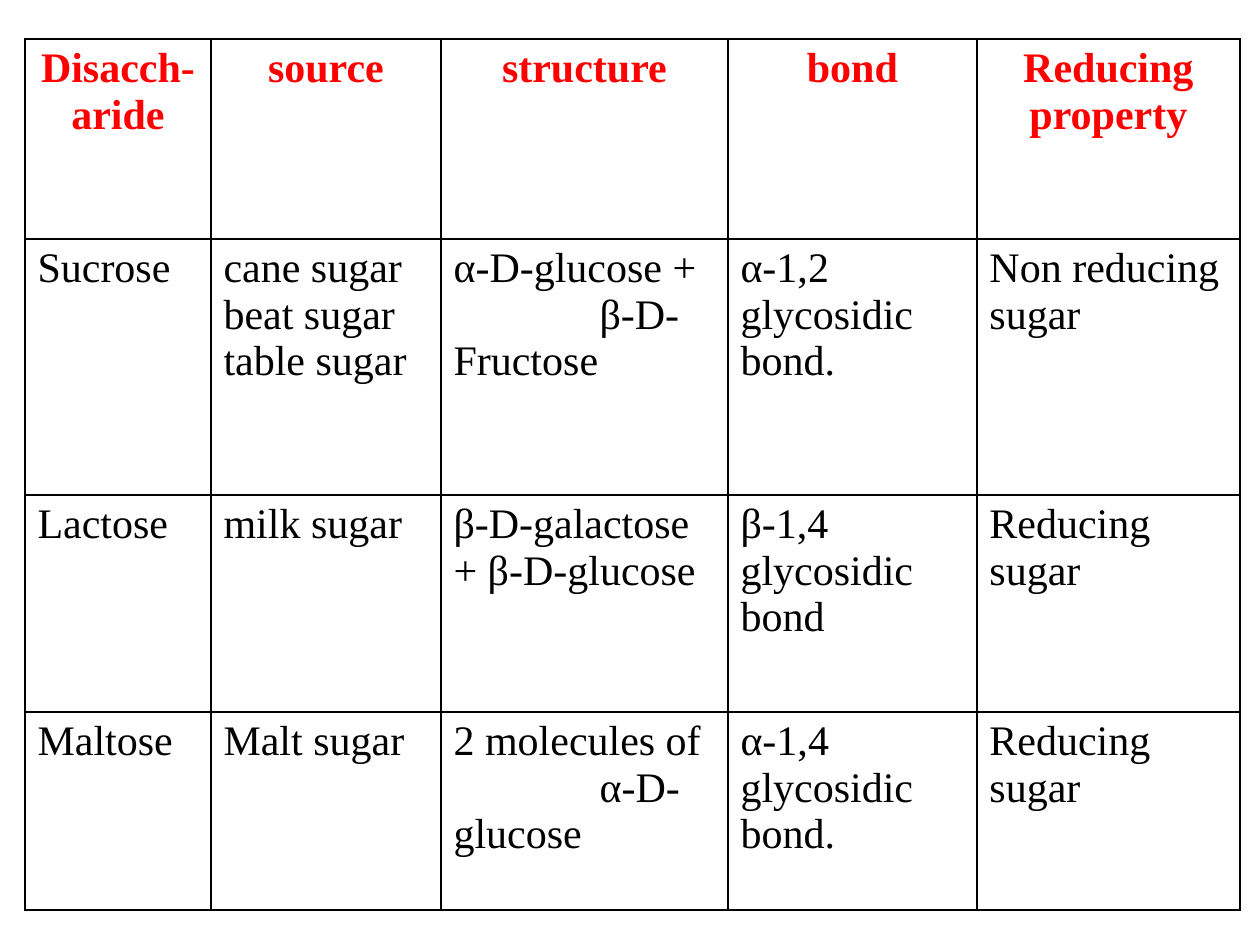
from dataclasses import dataclass

from lxml.etree import SubElement
from pptx import Presentation
from pptx.dml.color import RGBColor
from pptx.enum.text import PP_ALIGN as Align
from pptx.oxml.ns import qn
from pptx.util import Emu, Pt

SCALE = 914400 / 126
RED = RGBColor(0xFF, 0x00, 0x00)
BLACK = RGBColor(0x00, 0x00, 0x00)
FONT = "Times New Roman"

LEFT, TOP = 25, 39
COLS = (186, 230, 287, 249, 263)
ROWS = (200, 256, 217, 198)
SHIFT = 146


@dataclass(frozen=True)
class Line:
    text: str
    indent: int = 0


@dataclass(frozen=True)
class Sugar:
    name: str
    source: tuple[Line, ...]
    build: tuple[Line, ...]
    bond: str
    power: str

    def cells(self) -> list[tuple[Line, ...]]:
        return [(Line(self.name),), self.source, self.build,
                (Line(self.bond),), (Line(self.power),)]


HEADS = ("Disacch-aride", "source", "structure", "bond", "Reducing property")
SUGARS = (
    Sugar("Sucrose",
          (Line("cane sugar"), Line("beat sugar"), Line("table sugar")),
          (Line("α-D-glucose +"), Line("β-D-Fructose", SHIFT)),
          "α-1,2 glycosidic bond.", "Non reducing sugar"),
    Sugar("Lactose", (Line("milk sugar"),),
          (Line("β-D-galactose + β-D-glucose"),),
          "β-1,4 glycosidic bond", "Reducing sugar"),
    Sugar("Maltose", (Line("Malt sugar"),),
          (Line("2 molecules of"), Line("α-D-glucose", SHIFT)),
          "α-1,4 glycosidic bond.", "Reducing sugar"),
)


def px(n: int) -> Emu:
    return Emu(round(n * SCALE))


def write(frame, lines: tuple[Line, ...], *, color=BLACK, bold=False,
          align=Align.LEFT, size=24) -> None:
    for i, line in enumerate(lines):
        para = frame.paragraphs[0] if i == 0 else frame.add_paragraph()
        para.alignment = align
        if line.indent:
            props = para._p.get_or_add_pPr()
            props.set("marL", "0")
            props.set("indent", str(px(line.indent)))
        run = para.add_run()
        run.text = line.text
        font = run.font
        font.name, font.size, font.bold = FONT, Pt(size), bold
        font.color.rgb = color


def frame_cell(cell, color: RGBColor = BLACK, width: int = 1) -> None:
    """Rule all four sides of the cell and leave it unfilled."""
    props = cell._tc.get_or_add_tcPr()
    for side in ("lnL", "lnR", "lnT", "lnB"):
        edge = SubElement(props, qn(f"a:{side}"), w=str(Pt(width)))
        fill = SubElement(edge, qn("a:solidFill"))
        SubElement(fill, qn("a:srgbClr"), val=str(color))
    cell.fill.background()


def add_grid(slide):
    grid = slide.shapes.add_table(len(ROWS), len(COLS), px(LEFT), px(TOP),
                                  px(sum(COLS)), px(sum(ROWS))).table
    grid.first_row = grid.horz_banding = False
    for col, width in zip(grid.columns, COLS):
        col.width = px(width)
    for row, height in zip(grid.rows, ROWS):
        row.height = px(height)
    for cell in grid.iter_cells():
        frame_cell(cell)
    return grid


def main() -> None:
    deck = Presentation()
    deck.slide_width, deck.slide_height = px(1260), px(945)
    slide = deck.slides.add_slide(deck.slide_layouts[6])
    grid = add_grid(slide)
    for c, head in enumerate(HEADS):
        write(grid.cell(0, c).text_frame, (Line(head),),
              color=RED, bold=True, align=Align.CENTER)
    for r, sugar in enumerate(SUGARS, 1):
        for c, lines in enumerate(sugar.cells()):
            write(grid.cell(r, c).text_frame, lines)
    deck.save("out.pptx")


if __name__ == "__main__":
    main()
